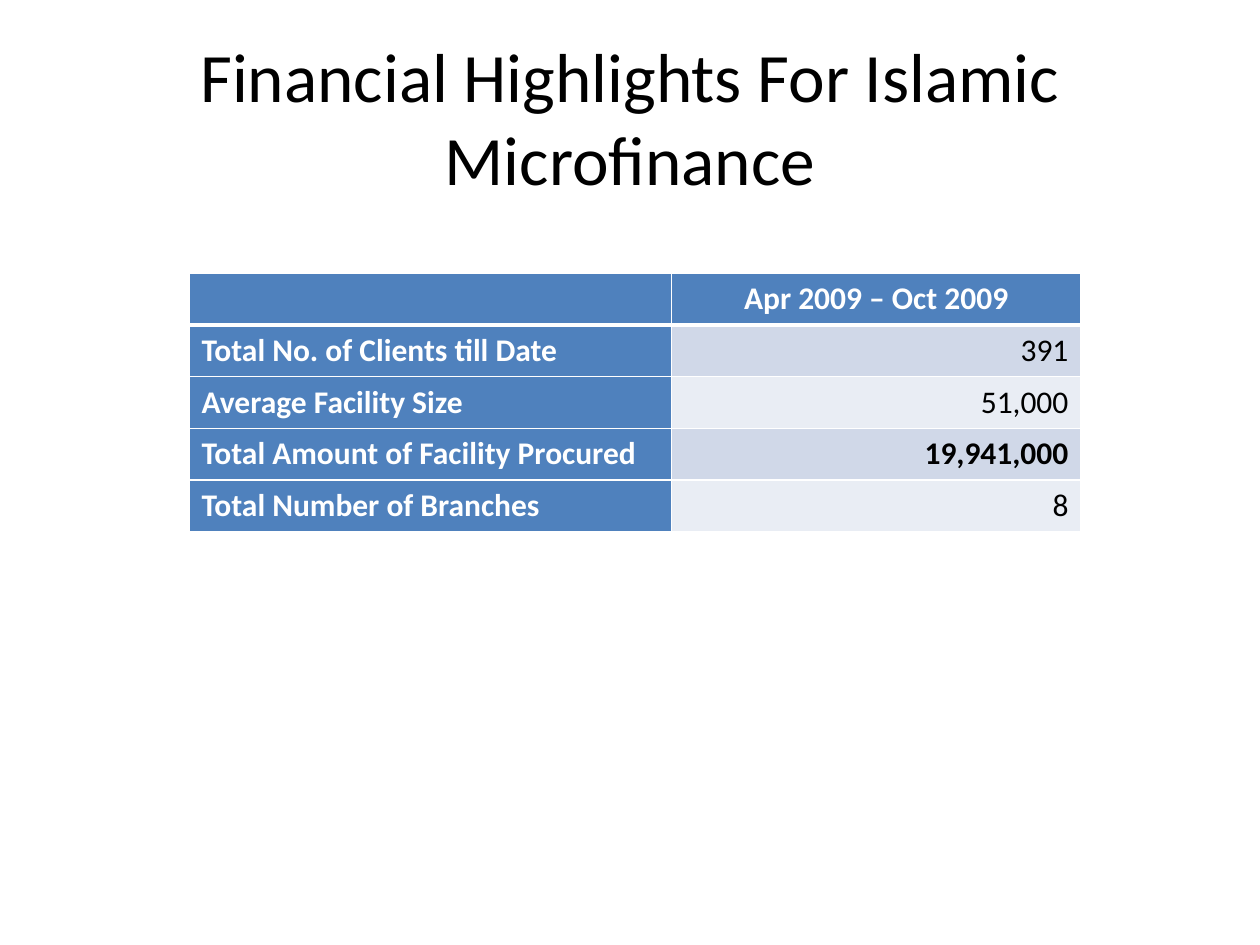
from lxml.etree import SubElement
from pptx import Presentation
from pptx.dml.color import RGBColor
from pptx.enum.text import MSO_ANCHOR, PP_ALIGN
from pptx.oxml.ns import qn
from pptx.util import Inches, Pt

COLORS = {
    "black": "000000",
    "white": "FFFFFF",
    "header": "4F81BD",
    "dark band": "D0D8E8",
    "light band": "E9EDF4",
}
PERIOD = "Apr 2009 – Oct 2009"
# Label, value, value in bold
HIGHLIGHTS = [
    ("Total No. of Clients till Date", "391", False),
    ("Average Facility Size", "51,000", False),
    ("Total Amount of Facility Procured", "19,941,000", True),
    ("Total Number of Branches", "8", False),
]


class SlideBuilder:
    font = "Calibri"
    title_size = 39.6
    table_size = 18

    def __init__(self, slide):
        self.slide = slide

    def color(self, name):
        return RGBColor.from_string(COLORS[name])

    def add_text(self, frame, text, size, color, align, bold=False):
        para = frame.paragraphs[0]
        para.alignment = align
        span = para.add_run()
        span.text = text
        span.font.name = self.font
        span.font.size = Pt(size)
        span.font.bold = bold
        span.font.color.rgb = self.color(color)

    def title(self, text, left, top, width, height):
        box = self.slide.shapes.title
        box.left, box.top = Inches(left), Inches(top)
        box.width, box.height = Inches(width), Inches(height)
        box.text_frame.word_wrap = True
        box.text_frame.vertical_anchor = MSO_ANCHOR.MIDDLE
        self.add_text(box.text_frame, text, self.title_size, "black", PP_ALIGN.CENTER)

    def table(self, left, top, widths, row_height, row_count):
        frame = self.slide.shapes.add_table(
            row_count, len(widths), Inches(left), Inches(top),
            Inches(sum(widths)), Inches(row_height * row_count))
        table = frame.table
        table.first_col = True
        for column, width in zip(table.columns, widths):
            column.width = Inches(width)
        for row in table.rows:
            row.height = Inches(row_height)
        return table

    def borders(self, cell, **widths):
        properties = cell._tc.get_or_add_tcPr()
        for position, side in enumerate("LRTB"):
            line = properties.makeelement(
                qn(f"a:ln{side}"), {"w": str(Pt(widths.get(side, 1)))})
            fill = SubElement(line, qn("a:solidFill"))
            SubElement(fill, qn("a:srgbClr"), val=COLORS["white"])
            properties.insert(position, line)

    def cell(self, cell, text, fill, color, align, bold, **widths):
        cell.fill.solid()
        cell.fill.fore_color.rgb = self.color(fill)
        self.borders(cell, **widths)
        if text:
            self.add_text(cell.text_frame, text, self.table_size, color, align, bold)


def main():
    deck = Presentation()
    deck.slide_width, deck.slide_height = Inches(10), Inches(7.5)
    page = SlideBuilder(deck.slides.add_slide(deck.slide_layouts[5]))

    # Title
    page.title("Financial Highlights For Islamic Microfinance", 0.5, 0.3, 9, 1.25)

    # Table header, with a thick rule below
    table = page.table(1.5, 2.17, [3.83, 3.25], 0.41, len(HIGHLIGHTS) + 1)
    for column, text in enumerate(["", PERIOD]):
        page.cell(table.cell(0, column), text, "header", "white",
                  PP_ALIGN.CENTER, True, B=3)

    # Labels and banded values
    for row, (label, value, bold) in enumerate(HIGHLIGHTS, start=1):
        band = "dark band" if row % 2 else "light band"
        top = 3 if row == 1 else 1
        page.cell(table.cell(row, 0), label, "header", "white",
                  PP_ALIGN.LEFT, True, T=top)
        page.cell(table.cell(row, 1), value, band, "black",
                  PP_ALIGN.RIGHT, bold, T=top)

    deck.save("out.pptx")


if __name__ == "__main__":
    main()
